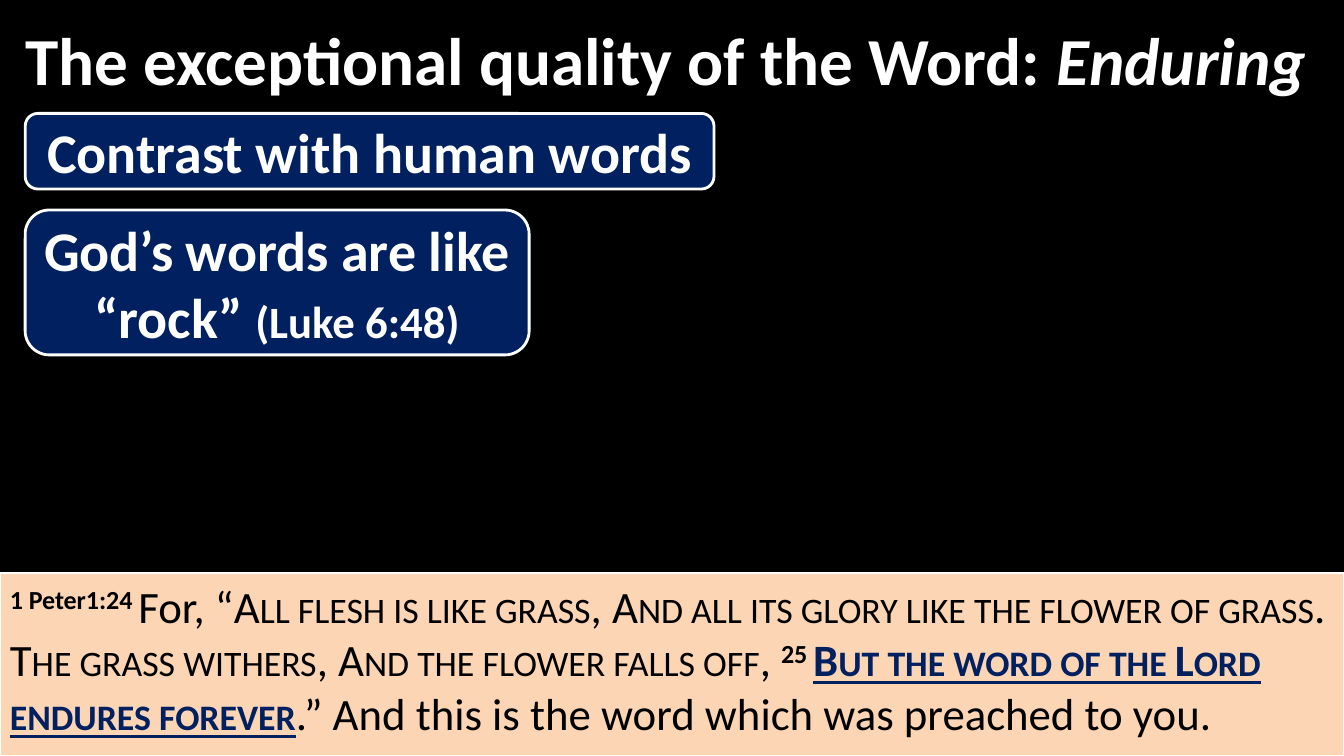
from pptx import Presentation
from pptx.dml.color import RGBColor
from pptx.enum.shapes import MSO_SHAPE
from pptx.enum.text import MSO_ANCHOR, MSO_AUTO_SIZE, PP_ALIGN
from pptx.util import Emu, Pt

EMU_PER_PX = 9525
FONT = "Calibri"
WHITE, BLACK, NAVY, PEACH = "FFFFFF", "000000", "002060", "FCD5B5"


def px(n):
    return Emu(n * EMU_PER_PX)


def rgb(value):
    return RGBColor.from_string(value)


def place(sp, left, top, width, height):
    sp.left, sp.top, sp.width, sp.height = map(px, (left, top, width, height))


def add_run(p, text, size, color, bold=False, italic=False,
            underline=False, small_caps=False, superscript=False):
    r = p.add_run()
    r.text = text
    font = r.font
    font.name, font.size = FONT, Pt(size)
    font.bold, font.italic, font.underline = bold, italic, underline
    font.color.rgb = rgb(color)
    rPr = r._r.get_or_add_rPr()
    if small_caps:
        rPr.set("cap", "small")
    if superscript:
        rPr.set("baseline", "30000")


def add_panel(s, kind, box, fill, line_width, anchor, align):
    sp = s.shapes.add_shape(kind, *map(px, box))
    sp.shadow.inherit = False
    sp.fill.solid()
    sp.fill.fore_color.rgb = rgb(fill)
    sp.line.color.rgb = rgb(WHITE)
    sp.line.width = Pt(line_width)
    tf = sp.text_frame
    tf.word_wrap = True
    tf.vertical_anchor = anchor
    p = tf.paragraphs[0]
    p.alignment = align
    return p


def set_title(s, text, emphasis):
    title = s.shapes.title
    place(title, 0, 8, 1280, 96)
    tf = title.text_frame
    tf.word_wrap = True
    tf.auto_size = MSO_AUTO_SIZE.NONE
    tf.vertical_anchor = MSO_ANCHOR.MIDDLE
    tf.margin_left = px(24)
    p = tf.paragraphs[0]
    p.alignment = PP_ALIGN.LEFT
    add_run(p, text, 48, WHITE, bold=True)
    add_run(p, emphasis, 48, WHITE, bold=True, italic=True)


def add_point(s, box, text, reference=""):
    p = add_panel(s, MSO_SHAPE.ROUNDED_RECTANGLE, box, NAVY, 2,
                  MSO_ANCHOR.MIDDLE, PP_ALIGN.CENTER)
    add_run(p, text, 40, WHITE, bold=True)
    if reference:
        add_run(p, reference, 32, WHITE, bold=True)


def add_passage(s, box, pieces):
    styles = {
        "verse": dict(color=BLACK, bold=True, superscript=True),
        "plain": dict(color=BLACK),
        "quote": dict(color=BLACK, small_caps=True),
        "key": dict(color=NAVY, bold=True, underline=True, small_caps=True),
    }
    p = add_panel(s, MSO_SHAPE.RECTANGLE, box, PEACH, 1.5,
                  MSO_ANCHOR.TOP, PP_ALIGN.LEFT)
    for style, text in pieces:
        add_run(p, text, 32, **styles[style])


def main():
    prs = Presentation()
    prs.slide_width, prs.slide_height = px(1280), px(720)
    s = prs.slides.add_slide(prs.slide_layouts[5])
    s.background.fill.solid()
    s.background.fill.fore_color.rgb = rgb(BLACK)

    set_title(s, "The exceptional quality of the Word: ", "Enduring")
    add_passage(s, (0, 546, 1280, 174), [
        ("verse", "1 Peter1:24 "),
        ("plain", "For, “"),
        ("quote", "All flesh is like grass"),
        ("plain", ", "),
        ("quote", "And all its glory like the flower of grass"),
        ("plain", ". "),
        ("quote", "The grass withers"),
        ("plain", ", "),
        ("quote", "And the flower falls off"),
        ("plain", ", "),
        ("verse", "25 "),
        ("key", "But the word of the Lord endures forever"),
        ("plain", ".” And this is the word which was preached to you."),
    ])
    add_point(s, (24, 108, 656, 72), "Contrast with human words")
    add_point(s, (24, 200, 480, 138), "God’s words are like “rock” ", "(Luke 6:48)")
    prs.save("out.pptx")


if __name__ == "__main__":
    main()
